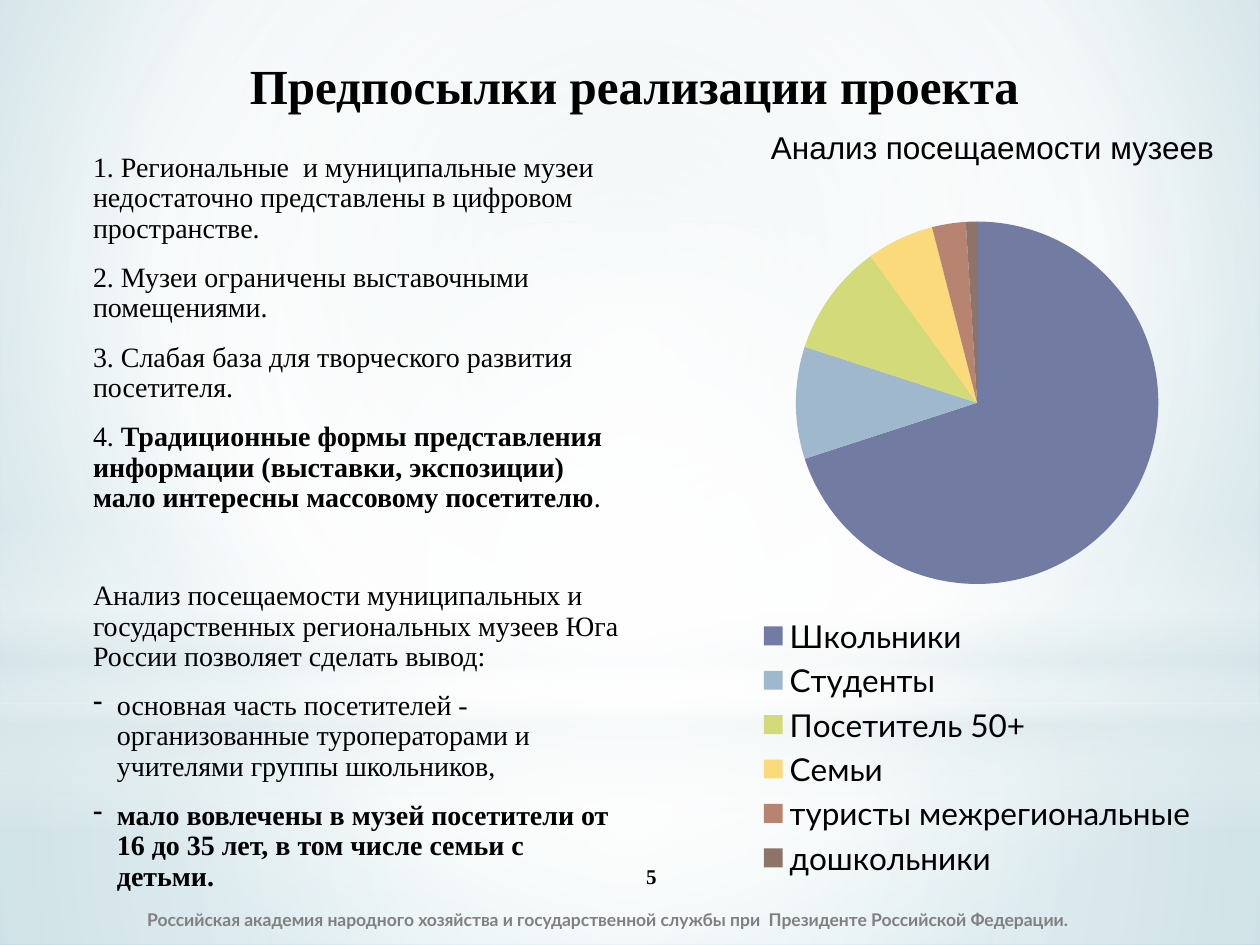
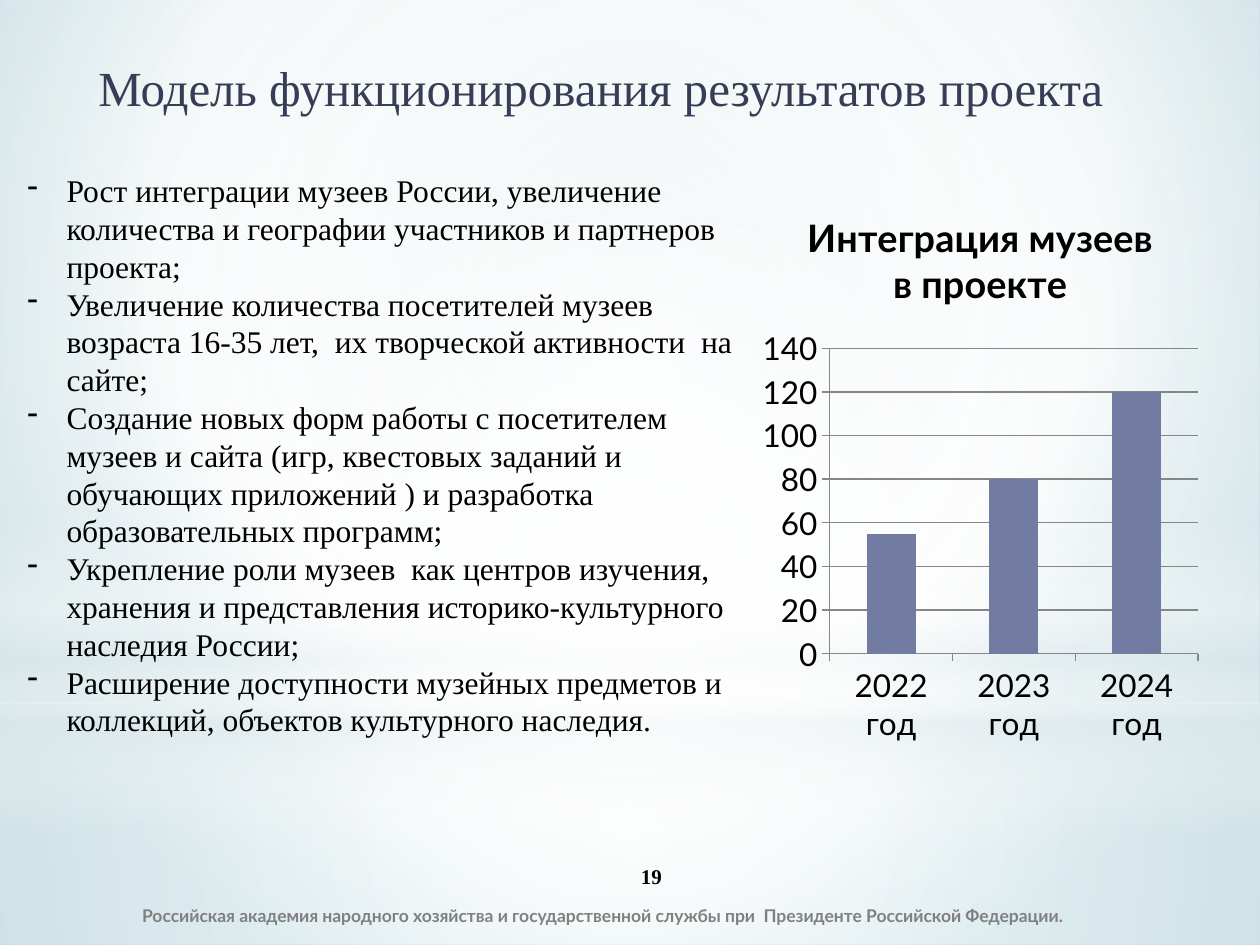
from lxml import etree
from pptx import Presentation
from pptx.chart.data import CategoryChartData
from pptx.dml.color import RGBColor
from pptx.enum import chart as charts, shapes, text
from pptx.oxml import ns
from pptx.util import Inches, Pt

SERIF, SANS = "Times New Roman", "Lato"
BLACK, GREY, NAVY, SLATE = "000000", "808080", "373D54", "727CA3"
FOOTER = ("Российская академия народного хозяйства и государственной службы при  "
          "Президенте Российской Федерации.")

CENTRE = (50, 50, 50, 50)
BACKDROP = [(0, "D0E2E6", 100), (60, "FFFFFF", 100), (100, "9BC8D4", 100)]
BANDS = [
    ("RECTANGLE", (0, 5.58, 10, 1.92),
     [(0, "FFFFFF", 91), (37, "FFFFFF", 76), (100, "DDE9EC", 79)], CENTRE),
    ("RECTANGLE", (0, 0, 10, 5.58),
     [(0, "FFFFFF", 89), (48, "FFFFFF", 62), (100, "DDE9EC", 79)], CENTRE),
    ("RECTANGLE", (0, 4.12, 10, 2.5),
     [(0, "FFFFFF", 0), (29, "FFFFFF", 30), (45, "DDE9EC", 40),
      (55, "FFFFFF", 26), (65, "DDE9EC", 60), (100, "FFFFFF", 0)], None),
    ("OVAL", (0, 1.75, 10, 5.58), [(0, "FFFFFF", 100), (56, "FFFFFF", 0)], CENTRE),
]

REASONS = [
    "1. Региональные  и муниципальные музеи недостаточно представлены в цифровом пространстве.",
    "2. Музеи ограничены выставочными помещениями.",
    "3. Слабая база для творческого развития посетителя.",
    [("4. ", False),
     ("Традиционные формы представления информации (выставки, экспозиции) "
      "мало интересны массовому посетителю", True),
     (".", False)],
]
CONCLUSION = ("Анализ посещаемости муниципальных и государственных региональных музеев "
              "Юга России позволяет сделать вывод:")
FINDINGS = [
    ("основная часть посетителей - организованные туроператорами и учителями "
     "группы школьников,", False),
    ("мало вовлечены в музей посетители от 16 до 35 лет, в том числе семьи с детьми.", True),
]
VISITORS = [
    ("Школьники", 70, SLATE),
    ("Студенты", 10, "9FB8CD"),
    ("Посетитель 50+", 10, "D2DA7A"),
    ("Семьи", 6, "FADA7A"),
    ("туристы межрегиональные", 3, "B88472"),
    ("дошкольники", 1, "8E736A"),
]
RESULTS = [
    "Рост интеграции музеев России, увеличение количества и географии участников и партнеров проекта;",
    "Увеличение количества посетителей музеев возраста 16-35 лет,  их творческой активности  на сайте;",
    "Создание новых форм работы с посетителем музеев и сайта (игр, квестовых заданий и "
    "обучающих приложений ) и разработка образовательных программ;",
    "Укрепление роли музеев  как центров изучения, хранения и представления "
    "историко-культурного наследия России;",
    "Расширение доступности музейных предметов и коллекций, объектов культурного наследия.",
]
MUSEUMS = [("2022 год", 55), ("2023 год", 80), ("2024 год", 120)]


def colour(value):
    return RGBColor.from_string(value)


def inches(place):
    return [Inches(length) for length in place]


def style(font, size, name, tint=BLACK, bold=False):
    font.size, font.name, font.bold = Pt(size), name, bold
    font.color.rgb = colour(tint)


def paint_gradient(parent, stops, focus):
    old = parent.find(ns.qn("a:solidFill"))
    fill = etree.Element(ns.qn("a:gradFill"), rotWithShape="1")
    stop_list = etree.SubElement(fill, ns.qn("a:gsLst"))
    for position, tint, opacity in stops:
        stop = etree.SubElement(stop_list, ns.qn("a:gs"), pos=str(position * 1000))
        value = etree.SubElement(stop, ns.qn("a:srgbClr"), val=tint)
        if opacity < 100:
            etree.SubElement(value, ns.qn("a:alpha"), val=str(opacity * 1000))
    if focus:
        route = etree.SubElement(fill, ns.qn("a:path"), path="circle")
        sides = {side: str(share * 1000) for side, share in zip("ltrb", focus)}
        etree.SubElement(route, ns.qn("a:fillToRect"), **sides)
    else:
        etree.SubElement(fill, ns.qn("a:lin"), ang="5400000", scaled="0")
    parent.replace(old, fill)


def build_master(deck, page):
    master = deck.slide_master
    master.background.fill.solid()
    master.background.fill.fore_color.rgb = colour("FFFFFF")
    paint_gradient(master.element.find(".//" + ns.qn("p:bgPr")), BACKDROP, (20, 10, 20, 60))
    for index, (kind, place, stops, focus) in enumerate(BANDS):
        band = page.shapes.add_shape(shapes.MSO_SHAPE[kind], *inches(place))
        band.shadow.inherit = False
        band.fill.solid()
        band.line.fill.background()
        paint_gradient(band.element.spPr, stops, focus)
        master.shapes.element.insert(2 + index, band.element)


def add_box(page, place, anchor="TOP", wrap=True):
    box = page.shapes.add_textbox(*inches(place))
    box.text_frame.word_wrap = wrap
    box.text_frame.vertical_anchor = text.MSO_ANCHOR[anchor]
    return box.text_frame


def add_line(frame, words, size, name, tint=BLACK, bold=False, hang=0, before=0, spacing=None):
    first = not frame.paragraphs[0].runs
    para = frame.paragraphs[0] if first else frame.add_paragraph()
    if spacing:
        para.line_spacing = spacing
    if before and not first:
        para.space_before = Pt(before)
    if hang:
        props = para._p.get_or_add_pPr()
        props.set("marL", str(Inches(hang)))
        props.set("indent", str(-Inches(hang)))
        etree.SubElement(props, ns.qn("a:buChar"), char="-")
    style(para.font, size, name, tint, bold)
    for words, heavy in [(words, bold)] if isinstance(words, str) else words:
        span = para.add_run()
        span.text = words
        if heavy != bold:
            span.font.bold = heavy
    return para


def set_title(page, words, place, tint, bold, align):
    title = page.shapes.title
    title.left, title.top, title.width, title.height = inches(place)
    frame = title.text_frame
    frame.auto_size = text.MSO_AUTO_SIZE.NONE
    frame.vertical_anchor = text.MSO_ANCHOR.BOTTOM
    para = add_line(frame, words, 28, SERIF, tint, bold, spacing=0.9)
    para.alignment = text.PP_ALIGN[align]


def add_footer(page, number, left, top):
    add_line(add_box(page, (left, top, 8.2, 0.4), "MIDDLE"), FOOTER, 10, SANS, GREY, True)
    frame = add_box(page, (4.17, 6.75, 2, 0.4), "MIDDLE")
    add_line(frame, number, 12, SERIF, bold=True).alignment = text.PP_ALIGN.CENTER


def add_chart(page, kind, place, names, values):
    table = CategoryChartData()
    table.categories = names
    table.add_series("Series 1", values)
    chart = page.shapes.add_chart(charts.XL_CHART_TYPE[kind], *inches(place), table).chart
    style(chart.font, 18, SANS)
    chart.has_title = chart.has_legend = False
    return chart, chart.plots[0]


def paint(form, tint):
    form.fill.solid()
    form.fill.fore_color.rgb = colour(tint)


def build_premises(page):
    set_title(page, "Предпосылки реализации проекта", (0.27, 0.42, 9.53, 0.54),
              BLACK, True, "CENTER")
    frame = add_box(page, (0.64, 1.17, 4.44, 5.97))
    for reason in REASONS:
        add_line(frame, reason, 16, SERIF, before=11, spacing=0.9)
    add_line(frame, CONCLUSION, 16, SERIF, before=39, spacing=0.9)
    for finding, bold in FINDINGS:
        add_line(frame, finding, 16, SERIF, bold=bold, hang=0.19, before=11, spacing=0.9)

    names, shares, tints = zip(*VISITORS)
    chart, plot = add_chart(page, "PIE", (5.71, 1.62, 4.09, 5.39), names, shares)
    plot.vary_by_categories = True
    for index, tint in enumerate(tints):
        paint(plot.series[0].points[index].format, tint)
    chart.has_legend = True
    chart.legend.position = charts.XL_LEGEND_POSITION.BOTTOM
    chart.legend.include_in_layout = False
    style(chart.legend.font, 18, SANS)
    caption = add_box(page, (6.02, 0.97, 3.75, 0.4), wrap=False)
    add_line(caption, "Анализ посещаемости музеев", 18, "Arial")
    add_footer(page, "5", 1.07, 7.1)


def build_model(page):
    set_title(page, "Модель функционирования результатов проекта", (0.68, 0.44, 8.91, 0.54),
              NAVY, False, "LEFT")
    frame = add_box(page, (0.12, 1.31, 5.87, 4.64))
    for result in RESULTS:
        add_line(frame, result, 18, SERIF, hang=0.31)

    names, counts = zip(*MUSEUMS)
    chart, plot = add_chart(page, "COLUMN_STACKED", (5.98, 1.47, 3.6, 4.51), names, counts)
    plot.vary_by_categories = False
    plot.gap_width, plot.overlap = 150, 100
    paint(plot.series[0].format, SLATE)
    chart.has_title = True
    add_line(chart.chart_title.text_frame, "Интеграция музеев в проекте", 21.6, SANS, bold=True)
    for axis in (chart.category_axis, chart.value_axis):
        axis.major_tick_mark = charts.XL_TICK_MARK.OUTSIDE
        axis.format.line.color.rgb = colour("868686")
        style(axis.tick_labels.font, 18, SANS)
    chart.value_axis.has_major_gridlines = True
    chart.value_axis.major_gridlines.format.line.color.rgb = colour("868686")
    add_footer(page, "19", 1.03, 7.07)


def main():
    deck = Presentation()
    deck.slide_width, deck.slide_height = Inches(10), Inches(7.5)
    premises, model = [deck.slides.add_slide(deck.slide_layouts[5]) for _ in range(2)]
    build_master(deck, premises)
    build_premises(premises)
    build_model(model)
    deck.save("out.pptx")


if __name__ == "__main__":
    main()
